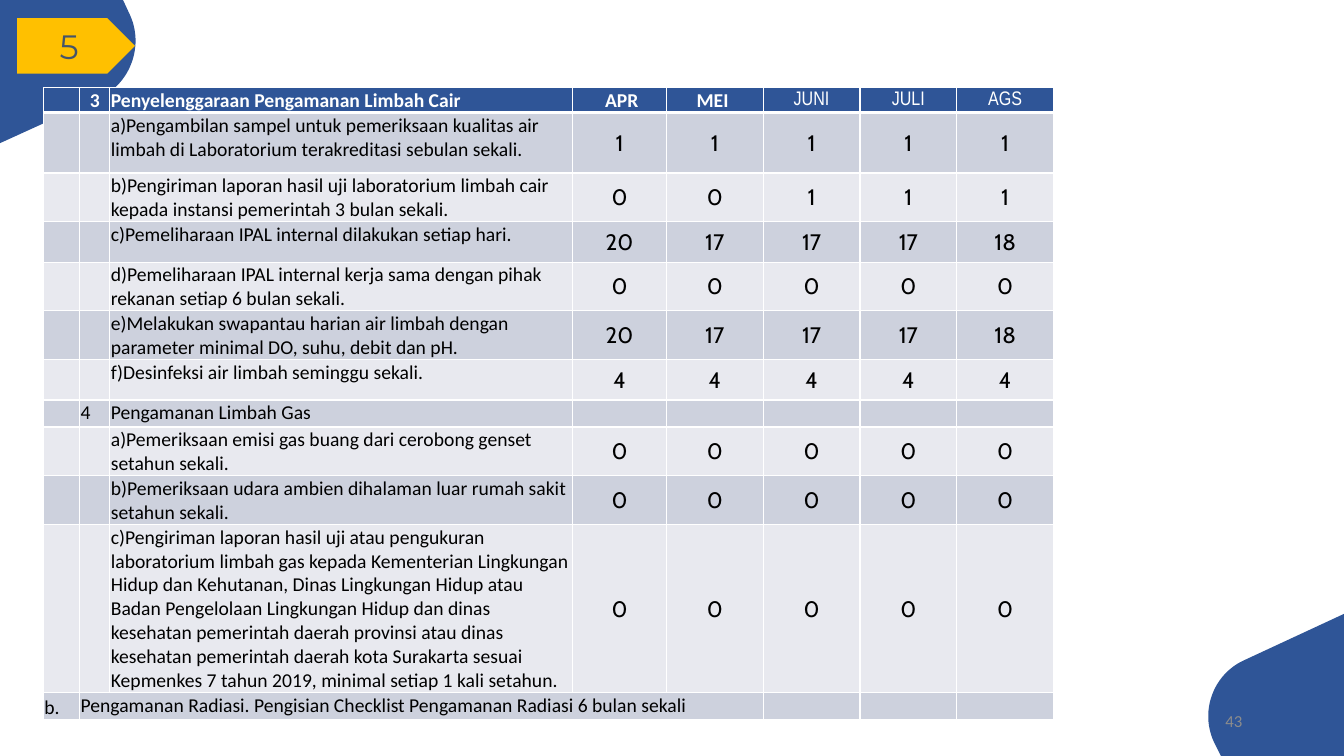
from lxml import etree
from pptx import Presentation, util as u
from pptx.dml.color import RGBColor
from pptx.enum import shapes, text
from pptx.oxml.ns import qn

WIDTH, HEIGHT = 13.33, 7.5
BLUE = RGBColor(0x2F, 0x55, 0x97)
AMBER = RGBColor(0xFF, 0xC0, 0x00)
SLATE = RGBColor(0x44, 0x54, 0x6A)
GRAY = RGBColor(0x8C, 0x8C, 0x8C)
WHITE = RGBColor(0xFF, 0xFF, 0xFF)
BLACK = RGBColor(0x00, 0x00, 0x00)
BANDS = RGBColor(0xE8, 0xE9, 0xEF), RGBColor(0xCD, 0xD1, 0xDD)

LEFT, CENTER, RIGHT = text.PP_ALIGN.LEFT, text.PP_ALIGN.CENTER, text.PP_ALIGN.RIGHT
TOP, MIDDLE, BOTTOM = (text.MSO_ANCHOR.TOP, text.MSO_ANCHOR.MIDDLE,
                       text.MSO_ANCHOR.BOTTOM)

BODY = dict(name="Calibri", size=u.Pt(14), bold=False)
COUNT = dict(name="Cabin", size=u.Pt(16), bold=False)
HEADING = dict(name="Calibri", size=u.Pt(14), bold=True)
NEW_MONTH = dict(name="Arial Narrow", size=u.Pt(14), bold=False)

COLUMNS = [0.36, 0.3, 4.59, 0.93] + [0.96] * 4
FIRST_MONTH = 3
MONTHS = ["\N{NO-BREAK SPACE}APR", "MEI\N{NO-BREAK SPACE}", "JUNI", "JULI", "AGS"]
NO_COUNTS = [""] * len(MONTHS)
ZEROS = ["0"] * len(MONTHS)
DAILY = ["20", "17", "17", "17", "18"]

# Row height, section letter, item number, activity, monthly counts
ROWS = [
    (0.17, "", "3", "Penyelenggaraan Pengamanan Limbah Cair", MONTHS),
    (0.6, "", "", "a)Pengambilan sampel untuk pemeriksaan kualitas air limbah di "
     "Laboratorium terakreditasi sebulan sekali.", ["1"] * 5),
    (0.43, "", "", "b)Pengiriman laporan hasil uji laboratorium limbah cair kepada "
     "instansi pemerintah 3 bulan sekali.", ["0", "0", "1", "1", "1"]),
    (0.4, "", "", "c)Pemeliharaan IPAL internal dilakukan setiap hari.", DAILY),
    (0.43, "", "", "d)Pemeliharaan IPAL internal kerja sama dengan pihak rekanan "
     "setiap 6 bulan sekali.", ZEROS),
    (0.43, "", "", "e)Melakukan swapantau harian air limbah dengan parameter minimal "
     "DO, suhu, debit dan pH.", DAILY),
    (0.4, "", "", "f)Desinfeksi air limbah seminggu sekali.", ["4"] * 5),
    (0.27, "", "4", "Pengamanan Limbah Gas", NO_COUNTS),
    (0.43, "", "", "a)Pemeriksaan emisi gas buang dari cerobong genset setahun "
     "sekali.", ZEROS),
    (0.43, "", "", "b)Pemeriksaan udara ambien dihalaman luar rumah sakit setahun "
     "sekali.", ZEROS),
    (1.57, "", "", "c)Pengiriman laporan hasil uji atau pengukuran laboratorium "
     "limbah gas kepada Kementerian Lingkungan Hidup dan Kehutanan, Dinas Lingkungan "
     "Hidup atau Badan Pengelolaan Lingkungan Hidup dan dinas kesehatan pemerintah "
     "daerah provinsi atau dinas kesehatan pemerintah daerah kota Surakarta sesuai "
     "Kepmenkes 7 tahun 2019, minimal setiap 1 kali setahun.", ZEROS),
    (0.27, "b.", "Pengamanan Radiasi. Pengisian Checklist Pengamanan Radiasi 6 bulan "
     "sekali", "", NO_COUNTS),
]

# Corner outlines: start, straight points, a four-point Bezier, closing points
TOP_CORNER = ([(0, 0), (1.22, 0)],
              [(1.29, 0.15), (1.43, 0.46), (1.29, 0.83), (0.99, 0.97)],
              [(0, 1.42)])
BOTTOM_CORNER = ([(13.33, 7.5), (12.11, 7.5)],
                 [(12.04, 7.36), (11.9, 7.06), (12.03, 6.69), (12.34, 6.55)],
                 [(13.33, 6.09)])


def bezier(controls, steps=24):
    """Return points along a cubic curve."""
    weights = [((1 - t) ** 3, 3 * t * (1 - t) ** 2, 3 * t * t * (1 - t), t ** 3)
               for t in (i / steps for i in range(steps + 1))]
    return [tuple(sum(w * point[axis] for w, point in zip(row, controls))
                  for axis in (0, 1)) for row in weights]


def paint(shape, color):
    shape.shadow.inherit = False
    shape.fill.solid()
    shape.fill.fore_color.rgb = color
    shape.line.fill.background()


def add_corner(slide, before, curve, after):
    start, *rest = [(u.Inches(x), u.Inches(y))
                    for x, y in before + bezier(curve) + after]
    outline = slide.shapes.build_freeform(*start)
    outline.add_line_segments(rest, close=True)
    paint(outline.convert_to_shape(), BLUE)


def write(frame, words, align, color, style):
    paragraph = frame.paragraphs[0]
    paragraph.alignment = align
    if not words:
        end = etree.SubElement(paragraph._p, qn("a:endParaRPr"))
        end.set("sz", str(int(style["size"].pt * 100)))
        return
    run = paragraph.add_run()
    run.text = words
    for key, value in style.items():
        setattr(run.font, key, value)
    run.font.color.rgb = color


def add_badge(slide, number, box):
    badge = slide.shapes.add_shape(shapes.MSO_SHAPE.PENTAGON, *map(u.Inches, box))
    paint(badge, AMBER)
    badge.text_frame.vertical_anchor = MIDDLE
    write(badge.text_frame, number, CENTER, SLATE,
          dict(name="Montserrat", size=u.Pt(24.1)))


def add_page_number(slide, number, box):
    frame = slide.shapes.add_textbox(*map(u.Inches, box)).text_frame
    frame.word_wrap = True
    frame.vertical_anchor = MIDDLE
    write(frame, number, RIGHT, GRAY, dict(name="Calibri", size=u.Pt(12)))


def set_borders(cell, bottom):
    properties = cell._tc.get_or_add_tcPr()
    sides = dict(lnL=1, lnR=1, lnT=1, lnB=bottom)
    for position, (side, points) in enumerate(sides.items()):
        line = etree.Element(qn(f"a:{side}"), w=str(u.Pt(points)))
        fill = etree.SubElement(line, qn("a:solidFill"))
        etree.SubElement(fill, qn("a:srgbClr"), val=str(WHITE))
        properties.insert(position, line)


def cell_format(row, column, words):
    """Return alignment, anchor and font style for a place in the table."""
    if column >= FIRST_MONTH:
        if row == 0:
            return CENTER, MIDDLE, HEADING if column < FIRST_MONTH + 2 else NEW_MONTH
        return CENTER, MIDDLE, COUNT if words else BODY
    if row == 0:
        return CENTER if column == 1 else LEFT, TOP, HEADING
    return LEFT, BOTTOM if column == 0 else TOP, BODY


def add_checklist(slide, left, top):
    heights = [row[0] for row in ROWS]
    box = left, top, sum(COLUMNS), sum(heights)
    table = slide.shapes.add_table(len(ROWS), len(COLUMNS),
                                   *map(u.Inches, box)).table
    for column, width in zip(table.columns, COLUMNS):
        column.width = u.Inches(width)
    for r, (height, letter, item, activity, counts) in enumerate(ROWS):
        table.rows[r].height = u.Inches(height)
        for c, words in enumerate([letter, item, activity, *counts]):
            cell = table.cell(r, c)
            align, anchor, style = cell_format(r, c, words)
            margins = dict(margin_left=0.01, margin_top=0.01,
                           margin_right=0.01, margin_bottom=0)
            for key, value in margins.items():
                setattr(cell, key, u.Inches(value))
            cell.vertical_anchor = anchor
            cell.fill.solid()
            cell.fill.fore_color.rgb = BANDS[r % 2] if r else BLUE
            set_borders(cell, bottom=1 if r else 3)
            write(cell.text_frame, words, align, BLACK if r else WHITE, style)
    last = len(ROWS) - 1
    table.cell(last, 1).merge(table.cell(last, 4))


def main():
    deck = Presentation()
    deck.slide_width, deck.slide_height = u.Inches(WIDTH), u.Inches(HEIGHT)
    slide = deck.slides.add_slide(deck.slide_layouts[6])
    for corner in (BOTTOM_CORNER, TOP_CORNER):
        add_corner(slide, *corner)
    add_badge(slide, "5", (0.17, 0.18, 1.17, 0.55))
    add_checklist(slide, 0.43, 0.87)
    add_page_number(slide, "43", (9.42, 6.95, 3, 0.4))
    deck.save("out.pptx")


if __name__ == "__main__":
    main()
